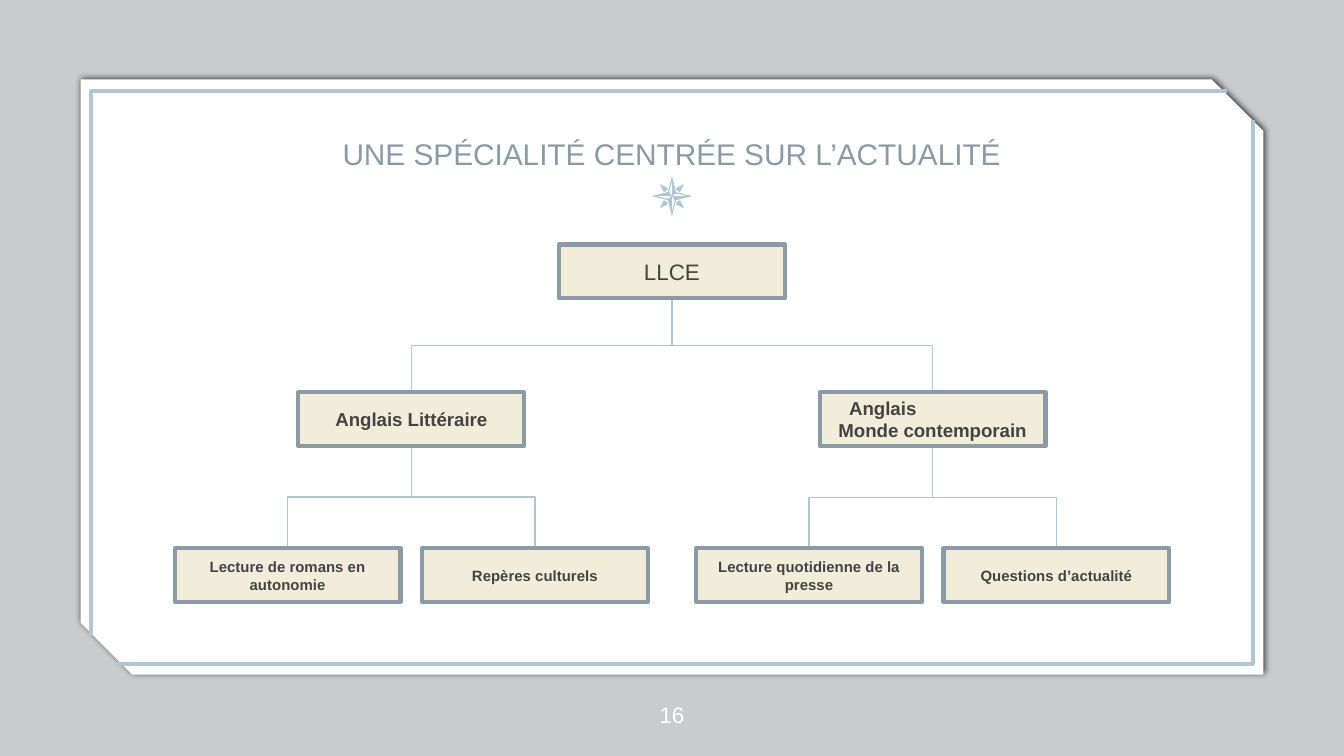
from lxml import etree
from pptx import Presentation
from pptx.dml.color import RGBColor
from pptx.enum import shapes, text
from pptx.oxml import ns, parse_xml
from pptx.util import Inches, Pt

COLORS = {"veil": "040E11", "paper": "FFFFFF", "accent": "B0C6D3",
          "slate": "8A9BA6", "cream": "F2EDDA", "ink": "434343", "shadow": "000000"}
rgb = {name: RGBColor.from_string(value) for name, value in COLORS.items()}

prs = Presentation()
prs.slide_width, prs.slide_height = Inches(10), Inches(10 * 9 / 16)
slide = prs.slides.add_slide(prs.slide_layouts[6])


def draw_outline(contours, closed=True):
    contours = [[(Inches(x), Inches(y)) for x, y in points] for points in contours]
    builder = slide.shapes.build_freeform(*contours[0][0], scale=1.0)
    for number, points in enumerate(contours):
        if number:
            builder.move_to(*points[0])
        builder.add_line_segments(points[1:], close=closed)
    outline = builder.convert_to_shape()
    outline.shadow.inherit = False
    if closed:
        outline.fill.solid()
        outline.fill.fore_color.rgb = rgb["accent"]
        outline.line.fill.background()
    else:
        outline.fill.background()
        outline.line.color.rgb = rgb["accent"]
        outline.line.width = Pt(2.25)


def write(holder, lines, size, color, bold=False, anchor=text.MSO_ANCHOR.MIDDLE, inset=0):
    frame = holder.text_frame
    frame.word_wrap = True
    frame.vertical_anchor = anchor
    frame.margin_left = frame.margin_right = Inches(inset)
    frame.margin_top = frame.margin_bottom = Inches(inset)
    paragraph = frame.paragraphs[0]
    paragraph.alignment = text.PP_ALIGN.CENTER
    for number, line in enumerate(lines):
        if number:
            paragraph.add_line_break()
        run = paragraph.add_run()
        run.text = line
        run.font.name = "Arial"
        run.font.size = Pt(size)
        run.font.bold = bold
        run.font.color.rgb = rgb[color]


veil = slide.shapes.add_shape(shapes.MSO_SHAPE.RECTANGLE, 0, Inches(-0.01), Inches(10), Inches(5.64))
card = slide.shapes.add_shape(shapes.MSO_SHAPE.SNIP_2_DIAG_RECTANGLE,
                              Inches(0.6), Inches(0.59), Inches(8.8), Inches(4.43))
card.adjustments[0], card.adjustments[1] = 0, 0.087
for panel, color in ((veil, "veil"), (card, "paper")):
    panel.shadow.inherit = False
    panel.fill.solid()
    panel.fill.fore_color.rgb = rgb[color]
    panel.line.fill.background()
veil_color = veil.fill._xPr.find(".//" + ns.qn("a:srgbClr"))
etree.SubElement(veil_color, ns.qn("a:alpha"), val="21000")
card.element.spPr.find(ns.qn("a:effectLst")).append(parse_xml(
    f'<a:outerShdw {ns.nsdecls("a")} blurRad="{Pt(3.4)}" dist="{Pt(0.8)}" dir="0" algn="ctr" rotWithShape="0">'
    f'<a:srgbClr val="{COLORS["shadow"]}"><a:alpha val="68000"/></a:srgbClr></a:outerShdw>'))

draw_outline([[(0.68, 4.73), (0.68, 0.68), (9.13, 0.68)]], closed=False)
draw_outline([[(9.32, 0.89), (9.32, 4.94), (0.87, 4.94)]], closed=False)

star_x, star_y = 5, 1.46
for sx in (-1, 1):
    for sy in (-1, 1):
        draw_outline([[(star_x + sx * x, star_y + sy * y)
                       for x, y in ((0.09, 0.09), (0.03, 0.06), (0.04, 0.04), (0.06, 0.03))]])
rim, facets = [], []
for cos, sin in ((1, 0), (0, 1), (-1, 0), (0, -1)):
    tip, notch, *facet = [(star_x + x * cos - y * sin, star_y + x * sin + y * cos)
                          for x, y in ((0.15, 0), (0.03, 0.03), (0.03, -0.02), (0.12, 0), (0, 0))]
    rim += [tip, notch]
    facets.append(facet)
draw_outline([rim[::-1]] + facets)

title = slide.shapes.add_textbox(Inches(1.1), Inches(0.68), Inches(7.8), Inches(0.6))
write(title, ["UNE SPÉCIALITÉ CENTRÉE SUR L’ACTUALITÉ"], 16, "slate", anchor=text.MSO_ANCHOR.BOTTOM)
page_number = slide.shapes.add_textbox(Inches(4.7), Inches(5.02), Inches(0.6), Inches(0.6))
write(page_number, ["16"], 12, "paper")

BOX_W, BOX_H = 1.68, 0.4
LEVEL_TOPS, LEVEL_SIZES = (1.82, 2.92, 4.08), (12, 10, 8)
left, right, spread = 3.06, 6.94, 0.92
nodes = [
    (0, 5, None, ["LLCE"]),
    (1, left, 5, ["Anglais Littéraire"]),
    (1, right, 5, ["Anglais", "Monde contemporain"]),
    (2, left - spread, left, ["Lecture de romans en autonomie"]),
    (2, left + spread, left, ["Repères culturels"]),
    (2, right - spread, right, ["Lecture quotidienne de la presse"]),
    (2, right + spread, right, ["Questions d’actualité"]),
]

for level, center, parent, _ in nodes[1:]:
    start_y, end_y = LEVEL_TOPS[level - 1] + BOX_H, LEVEL_TOPS[level]
    mid_x, mid_y = (center + parent) / 2, (start_y + end_y) / 2
    side = 1 if center > parent else -1
    half_drop, half_run = side * (end_y - start_y) / 2, abs(center - parent) / 2
    branch = slide.shapes.add_connector(
        shapes.MSO_CONNECTOR.ELBOW,
        Inches(mid_x + half_drop), Inches(mid_y - half_run),
        Inches(mid_x - half_drop), Inches(mid_y + half_run))
    branch.line.color.rgb = rgb["accent"]
    branch.line.width = Pt(0.75)
    properties = branch._element.spPr
    properties.find(ns.qn("a:xfrm")).set("rot", str((180 + side * 90) * 60000))
    etree.SubElement(properties, ns.qn("a:effectLst"))

for level, center, _, lines in nodes:
    box = slide.shapes.add_shape(shapes.MSO_SHAPE.RECTANGLE, Inches(center - BOX_W / 2),
                                 Inches(LEVEL_TOPS[level]), Inches(BOX_W), Inches(BOX_H))
    box.shadow.inherit = False
    box.fill.solid()
    box.fill.fore_color.rgb = rgb["cream"]
    box.line.color.rgb = rgb["slate"]
    box.line.width = Pt(2.25)
    write(box, lines, LEVEL_SIZES[level], "ink", bold=level > 0, inset=0.1)
    if len(lines) > 1:
        label = box.text_frame.paragraphs[0]
        label.alignment = text.PP_ALIGN.LEFT
        indents = label._p.get_or_add_pPr()
        indents.set("marL", str(Inches(0.04)))
        indents.set("indent", str(Inches(0.08)))

prs.save("out.pptx")
